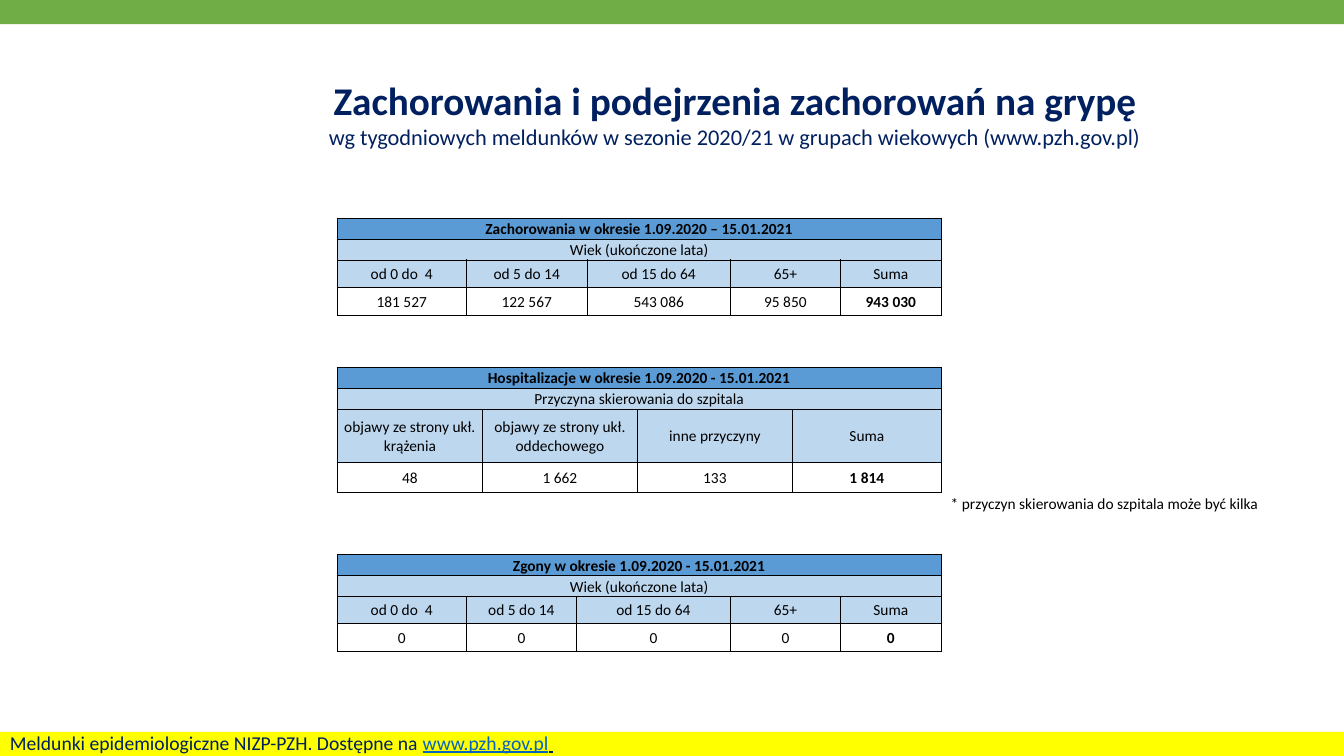
from lxml.etree import SubElement
from pptx import Presentation
from pptx.dml.color import RGBColor
from pptx.enum.shapes import MSO_SHAPE
from pptx.enum.text import MSO_ANCHOR, PP_ALIGN
from pptx.oxml.ns import qn
from pptx.util import Pt

WIDE, HIGH = 960, 540
NAVY, BLACK, BLUE, PALE = "002060", "000000", "5B9BD5", "BDD7EE"
AGES = ["od 0 do  4", "od 5 do 14", "od 15 do 64", "65+", "Suma"]
SIDES = ("a:lnL", "a:lnR", "a:lnT", "a:lnB")


def color(text):
    return RGBColor.from_string(text)


def add_run(para, text, size, tint=BLACK, bold=False, line=None):
    run = para.add_run()
    run.text = text
    font = run.font
    font.name, font.size, font.bold = "Calibri", Pt(size), bold
    font.underline = line
    font.color.rgb = color(tint)


def add_box(slide, box, anchor=MSO_ANCHOR.TOP):
    frame = slide.shapes.add_textbox(*map(Pt, box)).text_frame
    frame.word_wrap = True
    frame.vertical_anchor = anchor
    return frame


def add_band(slide, box, tint):
    band = slide.shapes.add_shape(MSO_SHAPE.RECTANGLE, *map(Pt, box))
    band.shadow.inherit = False
    band.fill.solid()
    band.fill.fore_color.rgb = color(tint)
    band.line.fill.background()


def add_title(slide, box):
    frame = add_box(slide, box, MSO_ANCHOR.MIDDLE)
    head, sub = frame.paragraphs[0], frame.add_paragraph()
    head.alignment = sub.alignment = PP_ALIGN.CENTER
    add_run(head, "Zachorowania i podejrzenia zachorowań na grypę", 28, NAVY, True)
    add_run(sub, "wg tygodniowych meldunków w sezonie 2020/21 "
            "w grupach wiekowych (www.pzh.gov.pl)", 16, NAVY)


def style_cell(cell, fill, anchor, sides=SIDES):
    """Set margins, fill and black borders on the given sides only."""
    cell.margin_left = cell.margin_right = cell.margin_top = Pt(0.7)
    cell.margin_bottom = 0
    cell.vertical_anchor = anchor
    props = cell._tc.get_or_add_tcPr()
    for side in SIDES:
        line = SubElement(props, qn(side), w=str(Pt(0.5)))
        if side in sides:
            SubElement(SubElement(line, qn("a:solidFill")), qn("a:srgbClr"), val=BLACK)
        else:
            SubElement(line, qn("a:noFill"))
    if fill:
        cell.fill.solid()
        cell.fill.fore_color.rgb = color(fill)
    else:
        cell.fill.background()


def add_grid(slide, left, top, cols, rows, heads, labels, values, anchor):
    """Two merged headings, labels and values; further columns stay clear."""
    count = len(labels)
    grid = slide.shapes.add_table(4, len(cols), Pt(left), Pt(top),
                                  Pt(sum(cols)), Pt(sum(rows))).table
    for col, width in zip(grid.columns, cols):
        col.width = Pt(width)
    for row, height in zip(grid.rows, rows):
        row.height = Pt(height)
    texts = [[head] for head in heads] + [labels, values]
    for r, (line, fill) in enumerate(zip(texts, (BLUE, PALE, PALE, None))):
        for c in range(len(cols)):
            cell = grid.cell(r, c)
            para = cell.text_frame.paragraphs[0]
            if c < count:
                style_cell(cell, fill, anchor if r < 2 else MSO_ANCHOR.MIDDLE)
            else:
                style_cell(cell, None, MSO_ANCHOR.MIDDLE, SIDES[:1])
            if c < len(line):
                para.alignment = PP_ALIGN.CENTER
                bold = r == 0 or (r == 3 and c == count - 1)
                add_run(para, line[c], 11, bold=bold)
            else:
                SubElement(para._p, qn("a:endParaRPr"), sz="1100")
        if r < 2:
            grid.cell(r, 0).merge(grid.cell(r, count - 1))


def add_tables(slide, left, top):
    add_grid(slide, left, top, [92.4, 86.2, 102.4, 78.6, 72],
             [15, 15, 19.8, 20],
             ["Zachorowania w okresie 1.09.2020 – 15.01.2021",
              "Wiek (ukończone lata)"], AGES,
             ["181 527", "122 567", "543 086", "95 850", "943 030"],
             MSO_ANCHOR.BOTTOM)
    add_grid(slide, left, top + 106.8, [104, 110.4, 111, 106.2, 18],
             [15, 15, 37.8, 21.6],
             ["Hospitalizacje w okresie 1.09.2020 - 15.01.2021",
              "Przyczyna skierowania do szpitala"],
             ["objawy ze strony ukł. krążenia",
              "objawy ze strony ukł. oddechowego", "inne przyczyny", "Suma"],
             ["48", "1 662", "133", "1 814"], MSO_ANCHOR.MIDDLE)
    add_grid(slide, left, top + 240.4, [92.4, 78.6, 110, 78.6, 72],
             [15, 15, 19.6, 19.6],
             ["Zgony w okresie 1.09.2020 - 15.01.2021",
              "Wiek (ukończone lata)"], AGES, ["0"] * 5, MSO_ANCHOR.BOTTOM)


def add_note(slide, box):
    add_run(add_box(slide, box).paragraphs[0],
            "* przyczyn skierowania do szpitala może być kilka", 11)


def add_foot(slide, box):
    para = add_box(slide, box).paragraphs[0]
    add_run(para, "Meldunki epidemiologiczne NIZP-PZH. Dostępne na ", 14, NAVY)
    add_run(para, "www.pzh.gov.pl", 14, "0563C1", line=True)
    add_run(para, " ", 14, NAVY, line=True)


def main():
    deck = Presentation()
    deck.slide_width, deck.slide_height = Pt(WIDE), Pt(HIGH)
    slide = deck.slides.add_slide(deck.slide_layouts[6])
    add_band(slide, (0, 0, WIDE, 17.3), "70AD47")
    add_band(slide, (0, HIGH - 17.3, WIDE, 17.3), "FFFF00")
    add_title(slide, (155.5, 28.8, 738.7, 104.4))
    add_tables(slide, 240.8, 155.6)
    add_note(slide, (672, 349.2, 255.6, 20.6))
    add_foot(slide, (0, 518.4, 556, 24.2))
    deck.save("out.pptx")


if __name__ == "__main__":
    main()
